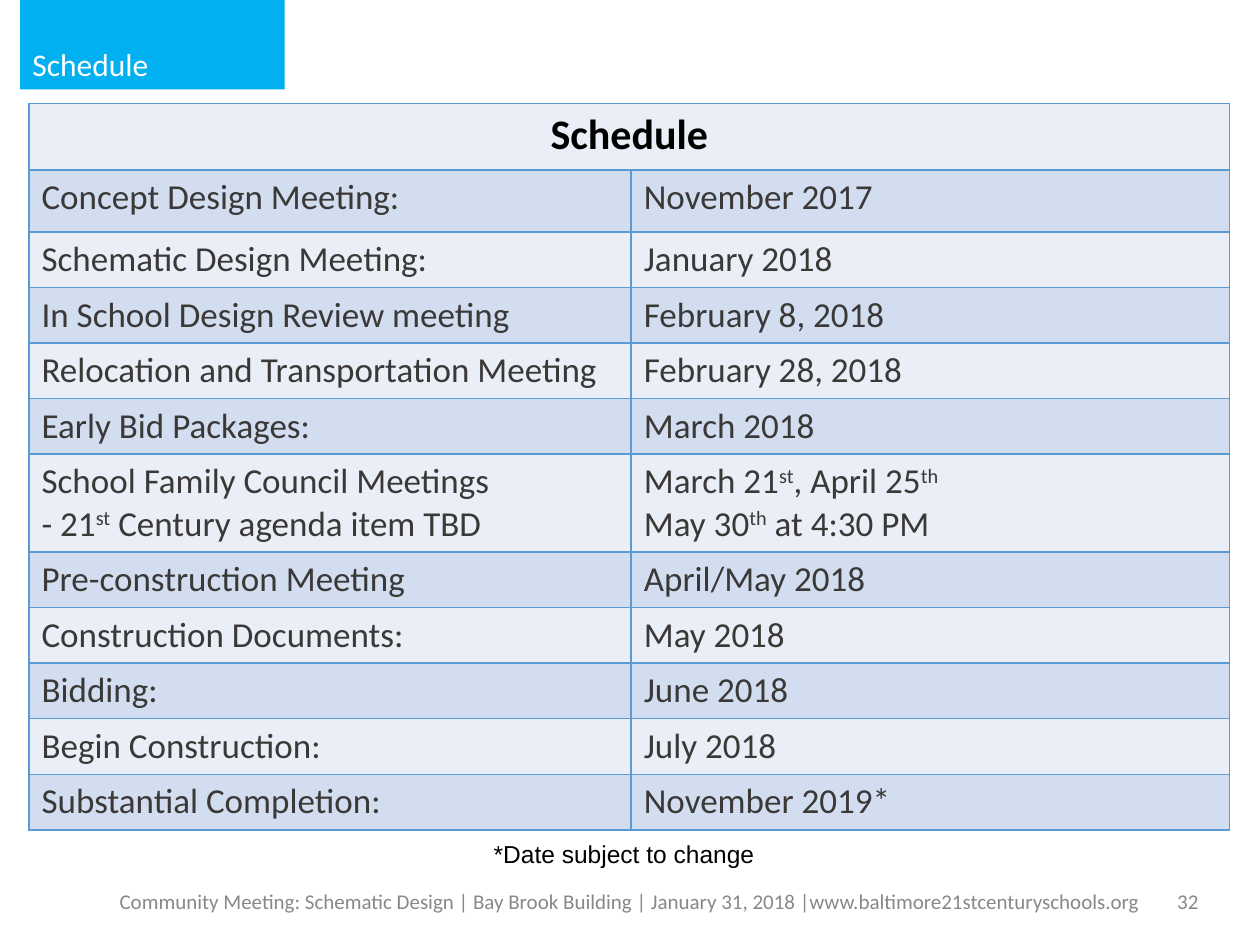
import pptx
import pptx.util
import pptx.dml.color
import pptx.enum.shapes
import pptx.enum.text
import pptx.oxml.ns
from lxml import etree

Inches = pptx.util.Inches
Pt = pptx.util.Pt
rgb = pptx.dml.color.RGBColor.from_string
qn = pptx.oxml.ns.qn
align = pptx.enum.text.PP_ALIGN
anchor = pptx.enum.text.MSO_ANCHOR

hues = {
    "tab": "00B0F0", "white": "FFFFFF", "black": "000000", "grey": "888888",
    "ink": "3B3838", "line": "5B9BD5", "pale": "EAEFF7", "band": "D2DEEF",
}


def write(frame, text, size, hue, side=align.LEFT, face="Calibri", bold=False):
    """Fill a text frame; newlines split paragraphs, ^ marks wrap superscripts."""
    for n, line in enumerate(text.split("\n")):
        para = frame.paragraphs[0] if n == 0 else frame.add_paragraph()
        para.alignment = side
        for i, part in enumerate(line.split("^")):
            if not part:
                continue
            run = para.add_run()
            run.text = part
            look = {"name": face, "size": Pt(size), "bold": bold}
            for key, value in look.items():
                setattr(run.font, key, value)
            run.font.color.rgb = rgb(hues[hue])
            if i % 2:
                run._r.get_or_add_rPr().set("baseline", "30000")


def edge(cell):
    """Draw a thin line on all four sides of a cell."""
    props = cell._tc.get_or_add_tcPr()
    for tag in ("a:lnL", "a:lnR", "a:lnT", "a:lnB"):
        line = etree.SubElement(props, qn(tag), w=str(Pt(1)))
        fill = etree.SubElement(line, qn("a:solidFill"))
        etree.SubElement(fill, qn("a:srgbClr"), val=hues["line"])


deck = pptx.Presentation()
deck.slide_width = Inches(10)
deck.slide_height = Inches(7.5)
slide = deck.slides.add_slide(deck.slide_layouts[6])

# Title tab
tab = slide.shapes.add_shape(
    pptx.enum.shapes.MSO_SHAPE.RECTANGLE,
    Inches(0.16), Inches(0), Inches(2.1), Inches(0.71))
tab.shadow.inherit = False
tab.fill.solid()
tab.fill.fore_color.rgb = rgb(hues["tab"])
tab.line.fill.background()
tab.text_frame.vertical_anchor = anchor.BOTTOM
write(tab.text_frame, "Schedule", 18, "white")

# Schedule table
rows = [
    ("Schedule", ""),
    ("Concept Design Meeting:", "November 2017"),
    ("Schematic Design Meeting:", "January 2018"),
    ("In School Design Review meeting", "February 8, 2018"),
    ("Relocation and Transportation Meeting", "February 28, 2018"),
    ("Early Bid Packages:", "March 2018"),
    ("School Family Council Meetings\n- 21^st^ Century agenda item TBD",
     "March 21^st^, April 25^th^\nMay 30^th^ at 4:30 PM"),
    ("Pre-construction Meeting", "April/May 2018"),
    ("Construction Documents:", "May 2018"),
    ("Bidding:", "June 2018"),
    ("Begin Construction:", "July 2018"),
    ("Substantial Completion:", "November 2019*"),
]
tall = {0: 0.53, 1: 0.49, 6: 0.77}
grid = slide.shapes.add_table(
    len(rows), 2, Inches(0.23), Inches(0.82), Inches(9.53), Inches(5.73)).table
for col, width in zip(grid.columns, (4.78, 4.75)):
    col.width = Inches(width)
grid.cell(0, 0).merge(grid.cell(0, 1))
for r, row in enumerate(rows):
    grid.rows[r].height = Inches(tall.get(r, 0.44))
    for c, text in enumerate(row):
        cell = grid.cell(r, c)
        edge(cell)
        cell.fill.solid()
        cell.fill.fore_color.rgb = rgb(hues["band" if r % 2 else "pale"])
        if r == 0:
            write(cell.text_frame, text, 24, "black", align.CENTER, bold=True)
        else:
            write(cell.text_frame, text, 20, "ink")

# Note, footer and page number
notes = [
    ((3.82, 6.61, 2.37, 0.34), anchor.TOP,
     ("*Date subject to change", 14, "black", align.LEFT, "Arial")),
    ((0.69, 6.95, 8.62, 0.4), anchor.MIDDLE,
     ("Community Meeting: Schematic Design | Bay Brook Building | "
      "January 31, 2018 |www.baltimore21stcenturyschools.org",
      12, "grey", align.CENTER)),
    ((7.36, 6.95, 2.25, 0.4), anchor.MIDDLE, ("32", 12, "grey", align.RIGHT)),
]
for place, hold, words in notes:
    box = slide.shapes.add_textbox(*[Inches(v) for v in place])
    box.text_frame.word_wrap = True
    box.text_frame.vertical_anchor = hold
    write(box.text_frame, *words)

deck.save("out.pptx")
